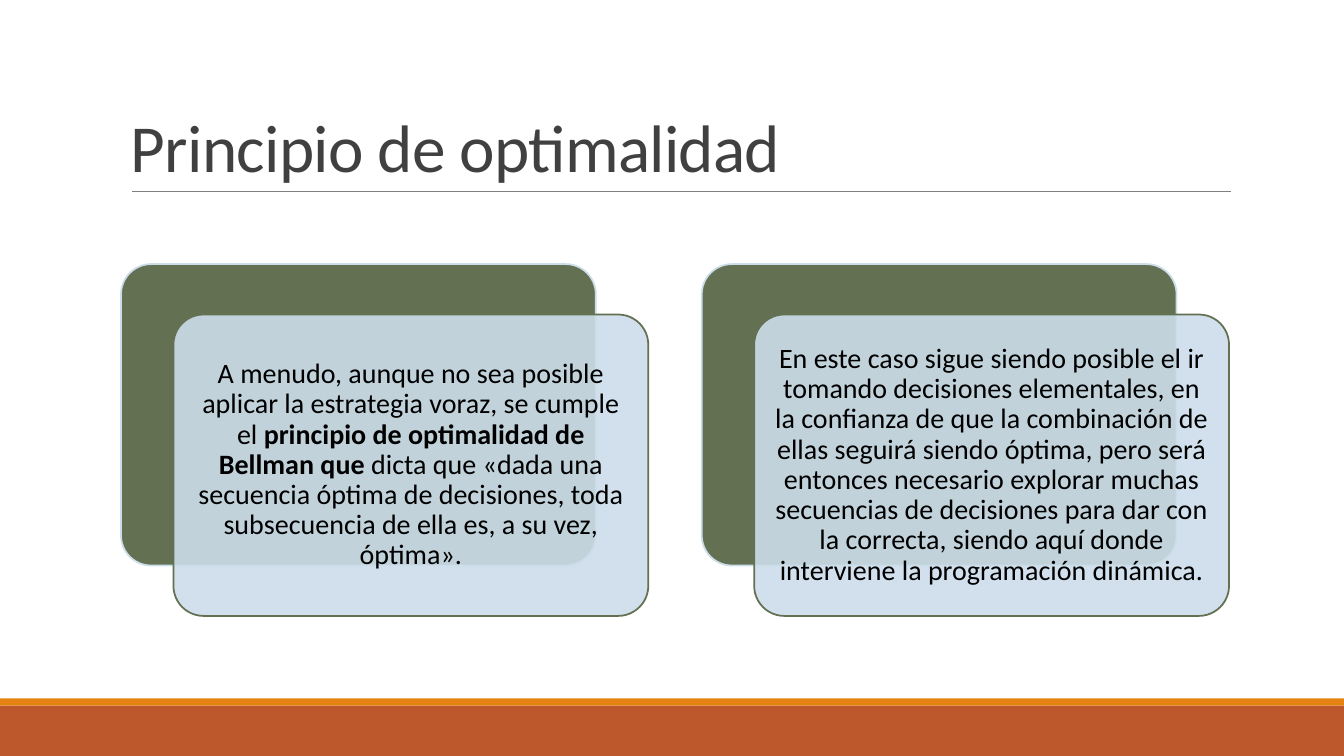
from lxml.etree import SubElement
from pptx import Presentation
from pptx.dml.color import RGBColor
from pptx.enum.shapes import MSO_CONNECTOR, MSO_SHAPE
from pptx.enum.text import MSO_ANCHOR, PP_ALIGN
from pptx.oxml.ns import qn
from pptx.util import Pt

SCALE = 9144  # EMU per px, 100 px to the inch
COLORS = {
    "rust": "BD582C", "amber": "E48312", "rule": "808080", "title": "404040",
    "moss": "637052", "sky": "CCDDEA", "ink": "000000",
}


def px(num):
    return num * SCALE


def apply(obj, values):
    for name, value in values.items():
        setattr(obj, name, value)


class Deck:
    def __init__(self, wide, high, font):
        self.show = Presentation()
        apply(self.show, {"slide_width": px(wide), "slide_height": px(high)})
        self.slide = self.show.slides.add_slide(self.show.slide_layouts[6])
        self.shapes = self.slide.shapes
        self.font = font

    def color(self, name):
        return RGBColor.from_string(COLORS[name])

    def box(self, kind, area, fill, edge=None, alpha=None):
        shape = self.shapes.add_shape(kind, *map(px, area))
        shape.shadow.inherit = False
        shape.fill.solid()
        shape.fill.fore_color.rgb = self.color(fill)
        if alpha:
            tint = shape._element.spPr.find(".//" + qn("a:srgbClr"))
            SubElement(tint, qn("a:alpha"), val=str(alpha * 1000))
        if edge:
            shape.line.color.rgb = self.color(edge)
            shape.line.width = Pt(1.25)
        else:
            shape.line.fill.background()
        return shape

    def card(self, area, fill, edge, alpha=None):
        shape = self.box(MSO_SHAPE.ROUNDED_RECTANGLE, area, fill, edge, alpha)
        shape.adjustments[0] = 0.1
        return shape

    def rule(self, left, top, right, color):
        line = self.shapes.add_connector(
            MSO_CONNECTOR.STRAIGHT, px(left), px(top), px(right), px(top))
        line.line.color.rgb = self.color(color)
        line.line.width = Pt(0.5)
        SubElement(line._element.spPr, qn("a:effectLst"))

    def label(self, shape, runs, color, size, frame, para, track=0):
        apply(shape.text_frame, {"word_wrap": True, **frame})
        first = shape.text_frame.paragraphs[0]
        apply(first, para)
        for text, bold in runs:
            run = first.add_run()
            run.text = text
            apply(run.font, {"name": self.font, "size": Pt(size), "bold": bold})
            run.font.color.rgb = self.color(color)
            if track:
                run._r.get_or_add_rPr().set("spc", str(track))

    def title(self, area, text):
        shape = self.shapes.add_textbox(*map(px, area))
        self.label(shape, [(text, False)], "title", 48,
                   {"vertical_anchor": MSO_ANCHOR.BOTTOM},
                   {"line_spacing": 0.85, "alignment": PP_ALIGN.LEFT}, -50)

    def panel(self, left, top, runs):
        wide, high = 471, 299
        self.card((left, top, wide, high), "moss", "sky")
        front = self.card((left + 52, top + 50, wide, high), "sky", "moss", 90)
        sides = ("left", "right", "top", "bottom")
        frame = {f"margin_{side}": px(8) for side in sides}
        frame["vertical_anchor"] = MSO_ANCHOR.MIDDLE
        self.label(front, runs, "ink", 20, frame,
                   {"line_spacing": 0.9, "alignment": PP_ALIGN.CENTER})


PANELS = [
    [("A menudo, aunque no sea posible aplicar la estrategia voraz, "
      "se cumple el ", False),
     ("principio de optimalidad de Bellman que ", True),
     ("dicta que «dada una secuencia óptima de decisiones, toda "
      "subsecuencia de ella es, a su vez, óptima».", False)],
    [("En este caso sigue siendo posible el ir tomando decisiones "
      "elementales, en la confianza de que la combinación de ellas seguirá "
      "siendo óptima, pero será entonces necesario explorar muchas "
      "secuencias de decisiones para dar con la correcta, siendo aquí donde "
      "interviene la programación dinámica.", False)],
]


def main():
    deck = Deck(1333, 750, "Calibri")

    # Footer bands
    deck.box(MSO_SHAPE.RECTANGLE, (0, 700, 1333, 50), "rust")
    deck.box(MSO_SHAPE.RECTANGLE, (0, 693, 1333, 7), "amber")

    # Heading and its rule
    deck.rule(131, 190, 1221, "rule")
    deck.title((120, 31, 1100, 159), "Principio de optimalidad")

    # Layered cards
    for col, runs in enumerate(PANELS):
        deck.panel(120 + col * 576, 262, runs)

    deck.show.save("out.pptx")


if __name__ == "__main__":
    main()
